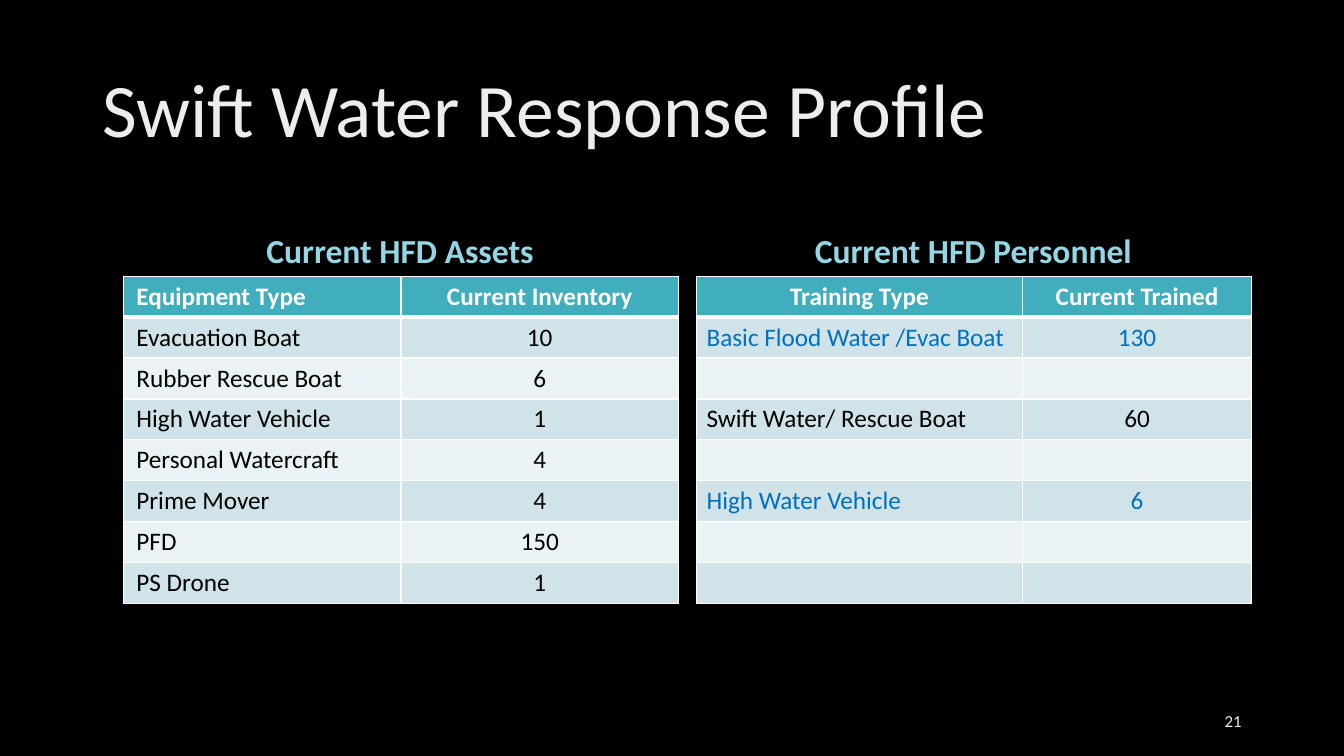
from pptx import Presentation
from pptx.dml.color import RGBColor
from pptx.enum.text import MSO_ANCHOR, PP_ALIGN
from pptx.oxml.ns import qn
from pptx.util import Pt
from lxml.etree import SubElement

SCALE = 9525
FONT = "Calibri"
HUES = {
    "back": "000000", "title": "EDEDED", "head": "94D7E4", "white": "FFFFFF",
    "teal": "41AEBD", "odd": "CFE3E8", "even": "E9F2F4",
    "black": "000000", "blue": "0070C0",
}
ASSETS = [
    ("Equipment Type", "Current Inventory"),
    ("Evacuation Boat", "10"),
    ("Rubber Rescue Boat", "6"),
    ("High Water Vehicle", "1"),
    ("Personal Watercraft", "4"),
    ("Prime Mover", "4"),
    ("PFD", "150"),
    ("PS Drone", "1"),
]
CREW = [
    ("Training Type", "Current Trained"),
    ("Basic Flood Water /Evac Boat", "130"),
    ("", ""),
    ("Swift Water/ Rescue Boat", "60"),
    ("", ""),
    ("High Water Vehicle", "6"),
    ("", ""),
    ("", ""),
]


def px(num):
    return num * SCALE


def hue(name):
    return RGBColor.from_string(HUES[name])


def add_run(para, text, size, color, bold=False):
    run = para.add_run()
    run.text = text
    run.font.name = FONT
    run.font.size = Pt(size)
    run.font.bold = bold
    run.font.color.rgb = hue(color)


def add_text(slide, area, text, size, color, align, anchor, bold=False, lead=1.0):
    frame = slide.shapes.add_textbox(*map(px, area)).text_frame
    frame.word_wrap = True
    frame.vertical_anchor = anchor
    para = frame.paragraphs[0]
    para.alignment = align
    para.line_spacing = lead
    add_run(para, text, size, color, bold)


def add_edge(cell, side, width):
    line = SubElement(cell._tc.get_or_add_tcPr(), qn("a:" + side), w=str(Pt(width)))
    fill = SubElement(line, qn("a:solidFill"))
    SubElement(fill, qn("a:srgbClr"), val=HUES["white"])


def add_cell(cell, text, row, align, color, inset):
    tops = {0: 1, 1: 3}
    add_edge(cell, "lnL", 1)
    add_edge(cell, "lnR", 1)
    add_edge(cell, "lnT", tops.get(row, 1))
    add_edge(cell, "lnB", 1 if row else 3)
    cell.fill.solid()
    cell.fill.fore_color.rgb = hue(("odd" if row % 2 else "even") if row else "teal")
    cell.margin_left = cell.margin_right = px(inset)
    para = cell.text_frame.paragraphs[0]
    para.alignment = align
    para.font.size = Pt(18)
    if text:
        add_run(para, text, 18, color, row == 0)


def add_grid(slide, left, top, widths, data, inset, mid=False, blues=()):
    high = 39
    area = (left, top, sum(widths), high * len(data))
    grid = slide.shapes.add_table(len(data), len(widths), *map(px, area)).table
    for col, width in enumerate(widths):
        grid.columns[col].width = px(width)
    for row, texts in enumerate(data):
        grid.rows[row].height = px(high)
        color = "blue" if row in blues else "black" if row else "white"
        for col, text in enumerate(texts):
            center = col > 0 or (mid and row == 0)
            align = PP_ALIGN.CENTER if center else PP_ALIGN.LEFT
            add_cell(grid.cell(row, col), text, row, align, color, inset)


def add_head(slide, left, text):
    add_text(slide, (left, 177, 528, 86), text, 24, "head",
             PP_ALIGN.CENTER, MSO_ANCHOR.BOTTOM, True, 0.9)


def main():
    deck = Presentation()
    deck.slide_width, deck.slide_height = px(1280), px(720)
    slide = deck.slides.add_slide(deck.slide_layouts[6])
    slide.background.fill.solid()
    slide.background.fill.fore_color.rgb = hue("back")
    add_text(slide, (88, 38, 1104, 139), "Swift Water Response Profile", 54, "title",
             PP_ALIGN.LEFT, MSO_ANCHOR.MIDDLE, lead=0.9)
    add_head(slide, 117, "Current HFD Assets")
    add_grid(slide, 118, 263, (264, 264), ASSETS, 12)
    add_head(slide, 663, "Current HFD Personnel")
    add_grid(slide, 663, 263, (311, 218), CREW, 10, True, (1, 5))
    add_text(slide, (904, 667, 288, 38), "21", 12, "title",
             PP_ALIGN.RIGHT, MSO_ANCHOR.MIDDLE)
    deck.save("out.pptx")


if __name__ == "__main__":
    main()
